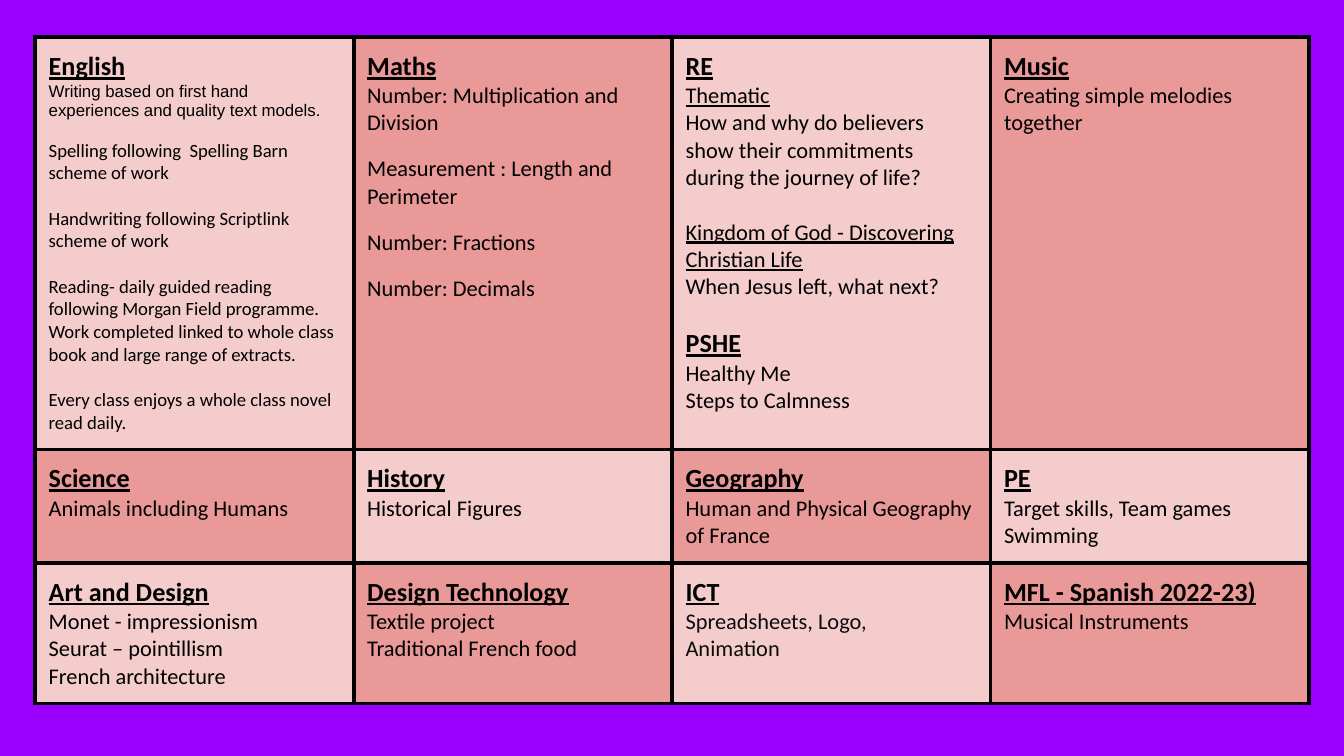
from dataclasses import dataclass

from lxml import etree
from pptx import Presentation, util as u
from pptx.dml.color import RGBColor
from pptx.oxml.ns import qn

PURPLE, PALE, ROSE = "9900FF", "F4CCCC", "EA9999"
BLACK, CHARCOAL = "000000", "0B0C0C"
LEFT, TOP, COL_WIDTH = 18.9, 19.9, 170.6
ROW_HEIGHTS = (221, 60, 60)
MARGIN, BORDER = 7.2, 2.25


@dataclass(frozen=True)
class Line:
    text: str
    size: float = 12
    before: float = 0
    bold: bool = False
    underline: bool = False
    font: str = "Calibri"
    color: str = BLACK


def heading(text: str, before: float = 0) -> Line:
    return Line(text, 14, before, bold=True, underline=True)


def subject(name: str, *lines: str) -> list[Line]:
    return [heading(name), *map(Line, lines)]


# Curriculum, row by row
ENGLISH = [
    heading("English"),
    Line("Writing based on first hand experiences and quality text models.",
         9, font="Arial"),
    Line("Spelling following  Spelling Barn scheme of work", 10, 10.4),
    *(Line(text, 10, 12.2) for text in (
        "Handwriting following Scriptlink scheme of work",
        "Reading- daily guided reading following Morgan Field programme. "
        "Work completed linked to whole class book and large range of extracts.",
        "Every class enjoys a whole class novel read daily.")),
]
MATHS = [
    *subject("Maths", "Number: Multiplication and Division"),
    *(Line(text, before=10) for text in (
        "Measurement : Length and Perimeter",
        "Number: Fractions",
        "Number: Decimals")),
]
RE_PSHE = [
    heading("RE"),
    Line("Thematic", underline=True),
    Line("How and why do believers show their commitments during the journey of life?"),
    Line("Kingdom of God - Discovering Christian Life", before=14.6, underline=True),
    Line("When Jesus left, what next?"),
    heading("PSHE", before=14.6),
    Line("Healthy Me"),
    Line("Steps to Calmness"),
]
ICT = [
    heading("ICT"),
    Line("Spreadsheets, Logo,", color=CHARCOAL),
    Line("Animation", color=CHARCOAL),
]
CURRICULUM = [
    [ENGLISH, MATHS, RE_PSHE,
     subject("Music", "Creating simple melodies together")],
    [subject("Science", "Animals including Humans"),
     subject("History", "Historical Figures"),
     subject("Geography", "Human and Physical Geography of France"),
     subject("PE", "Target skills, Team games", "Swimming")],
    [subject("Art and Design", "Monet - impressionism", "Seurat – pointillism",
             "French architecture"),
     subject("Design Technology", "Textile project", "Traditional French food"),
     ICT,
     subject("MFL - Spanish 2022-23)", "Musical Instruments")],
]


def paint(fill, color: str) -> None:
    fill.solid()
    fill.fore_color.rgb = RGBColor.from_string(color)


def add_borders(cell) -> None:
    tc_pr = cell._tc.get_or_add_tcPr()
    for i, side in enumerate(("lnL", "lnR", "lnT", "lnB")):
        ln = etree.Element(qn(f"a:{side}"), w=str(u.Pt(BORDER)))
        solid = etree.SubElement(ln, qn("a:solidFill"))
        etree.SubElement(solid, qn("a:srgbClr"), val=BLACK)
        tc_pr.insert(i, ln)  # borders come before the fill


def write_line(p, line: Line) -> None:
    for name, value in {"space_before": u.Pt(line.before),
                        "space_after": u.Pt(0), "line_spacing": 1.0}.items():
        setattr(p, name, value)
    r = p.add_run()
    r.text = line.text
    for name, value in {"name": line.font, "size": u.Pt(line.size),
                        "bold": line.bold, "underline": line.underline}.items():
        setattr(r.font, name, value)
    r.font.color.rgb = RGBColor.from_string(line.color)


def fill_cell(cell, lines: list[Line], color: str) -> None:
    for side in ("left", "right", "top", "bottom"):
        setattr(cell, f"margin_{side}", u.Pt(MARGIN))
    paint(cell.fill, color)
    add_borders(cell)
    tf = cell.text_frame
    for i, line in enumerate(lines):
        write_line(tf.add_paragraph() if i else tf.paragraphs[0], line)


def main() -> None:
    prs = Presentation()
    prs.slide_width, prs.slide_height = u.Pt(720), u.Pt(405)
    s = prs.slides.add_slide(prs.slide_layouts[6])
    paint(s.background.fill, PURPLE)

    # Subject grid in a checkerboard of two pinks
    n_rows, n_cols = len(CURRICULUM), len(CURRICULUM[0])
    table = s.shapes.add_table(n_rows, n_cols, u.Pt(LEFT), u.Pt(TOP),
                               u.Pt(COL_WIDTH * n_cols),
                               u.Pt(sum(ROW_HEIGHTS))).table
    table.first_row = table.horz_banding = False
    for col in table.columns:
        col.width = u.Pt(COL_WIDTH)
    for i, (height, subjects) in enumerate(zip(ROW_HEIGHTS, CURRICULUM)):
        table.rows[i].height = u.Pt(height)
        for j, lines in enumerate(subjects):
            fill_cell(table.cell(i, j), lines, ROSE if (i + j) % 2 else PALE)

    prs.save("out.pptx")


if __name__ == "__main__":
    main()
